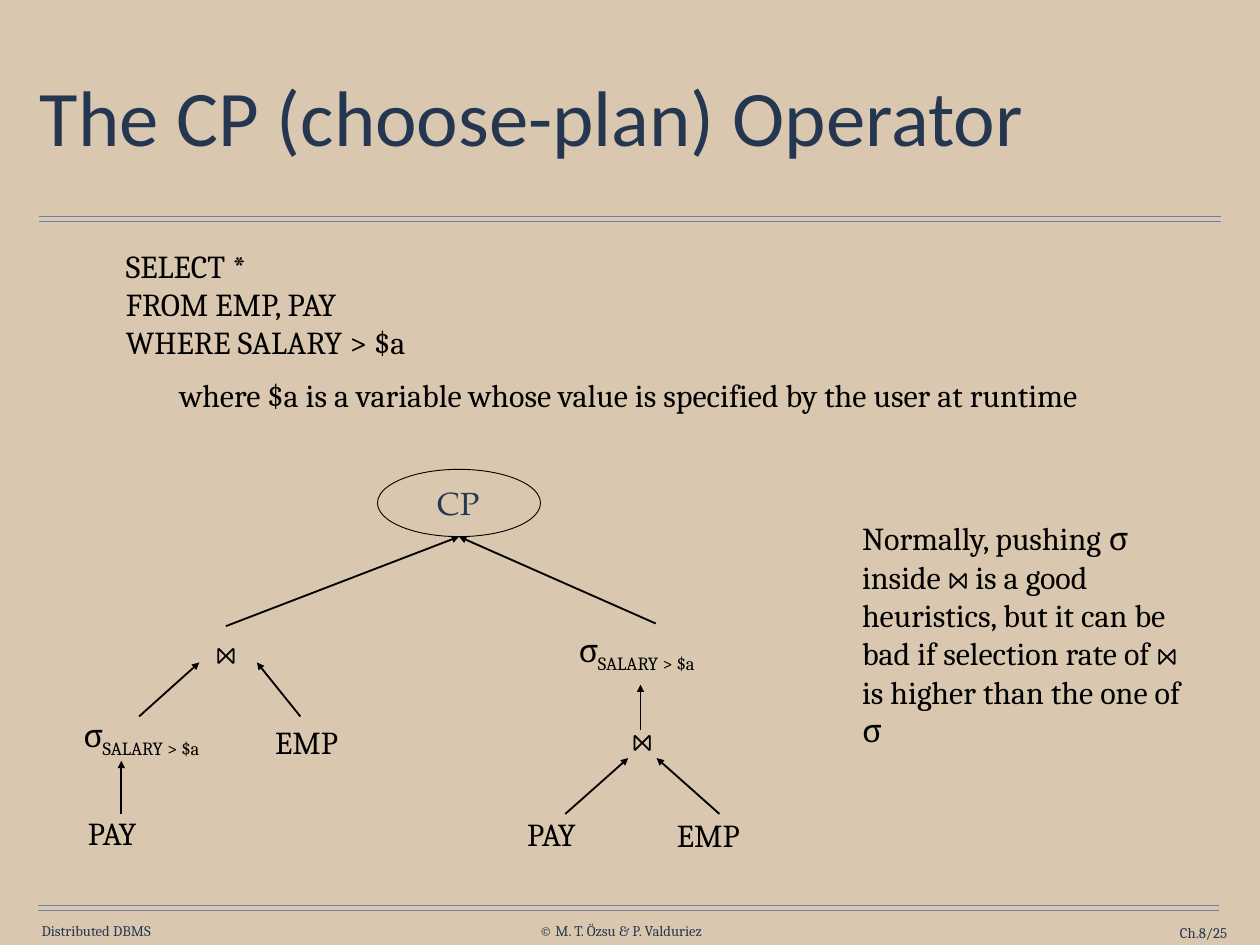
from dataclasses import dataclass

from lxml.etree import SubElement
from pptx import Presentation
from pptx.dml.color import RGBColor as Rgb
from pptx.enum.shapes import MSO_CONNECTOR as Connector, MSO_SHAPE as Preset
from pptx.enum.text import MSO_ANCHOR as Anchor, PP_ALIGN as Align
from pptx.oxml.ns import qn
from pptx.util import Inches, Pt

WIDTH, HEIGHT = Inches(14.22), Inches(10.67)
LABEL_INSETS = (0.14, 0.07)
RULE_GAP = 0.56


@dataclass(frozen=True)
class Theme:
    paper: Rgb = Rgb.from_string("D9C8AF")
    ink: Rgb = Rgb.from_string("000000")
    navy: Rgb = Rgb.from_string("263750")
    title_navy: Rgb = Rgb.from_string("253750")
    rule: Rgb = Rgb.from_string("6682AA")
    body_font: str = "Cambria"
    title_font: str = "Calibri"
    operator_font: str = "TeX Gyre Pagella"
    title_size: int = 64
    body_size: int = 26
    footer_size: int = 12


THEME = Theme()


# Positions are on a grid of 100 columns by 100 rows
def col(count):
    return round(WIDTH * count / 100)


def row(count):
    return round(HEIGHT * count / 100)


def write(frame, text, size=THEME.body_size, font=THEME.body_font, color=THEME.ink,
          align=Align.LEFT, spacing=None, before=0, indent=0):
    """Add a paragraph; a newline breaks the line, an underscore starts a subscript."""
    paragraph = frame.paragraphs[0]
    if paragraph.runs:
        paragraph = frame.add_paragraph()
    paragraph.alignment = align
    paragraph.space_before = Pt(before)
    if spacing:
        paragraph.line_spacing = spacing
    if indent:
        properties = paragraph._p.get_or_add_pPr()
        properties.set("marL", str(col(indent)))
        properties.set("indent", "0")
    for line_index, line in enumerate(text.split("\n")):
        if line_index:
            paragraph.add_line_break()
        for level, part in enumerate(line.split("_")):
            run = paragraph.add_run()
            run.text = part
            run.font.size, run.font.name = Pt(size), font
            run.font.color.rgb = color
            if level:
                run._r.get_or_add_rPr().set("baseline", "-25000")


def set_frame(frame, insets, anchor):
    frame.word_wrap = True
    frame.vertical_anchor = anchor
    frame.margin_left = frame.margin_right = Inches(insets[0])
    frame.margin_top = frame.margin_bottom = Inches(insets[1])


def add_text(slide, place, text, insets=(0, 0), anchor=Anchor.TOP, **text_format):
    left, top, width, height = place
    box = slide.shapes.add_textbox(col(left), row(top), col(width), row(height))
    set_frame(box.text_frame, insets, anchor)
    write(box.text_frame, text, **text_format)
    return box


def add_line(slide, start, end, color=THEME.ink, weight=1.5, arrow=True, source=None):
    line = slide.shapes.add_connector(
        Connector.STRAIGHT, col(start[0]), row(start[1]), col(end[0]), row(end[1]))
    line.line.color.rgb = color
    line.line.width = Pt(weight)
    if arrow:
        SubElement(line.line._get_or_add_ln(), qn("a:tailEnd"), type="triangle")
    SubElement(line._element.spPr, qn("a:effectLst"))
    if source is not None:
        line.begin_connect(source, 0)


def add_double_rule(slide, left, right, top):
    for y in (top, top + RULE_GAP):
        add_line(slide, (left, y), (right, y), THEME.rule, 1, arrow=False)


def add_operator(slide, place, text):
    left, top, width, height = place
    operator = slide.shapes.add_shape(
        Preset.OVAL, col(left), row(top), col(width), row(height))
    operator.shadow.inherit = False
    operator.fill.background()
    operator.line.color.rgb = THEME.ink
    operator.line.width = Pt(0.75)
    set_frame(operator.text_frame, (0.1, 0.05), Anchor.MIDDLE)
    write(operator.text_frame, text, font=THEME.operator_font,
          color=THEME.navy, align=Align.CENTER)


def add_footer(slide):
    for left, top, width, text, align in (
            (3.3, 97.56, 9.7, "Distributed DBMS", Align.LEFT),
            (42.83, 97.56, 14.63, "© M. T. Özsu & P. Valduriez", Align.LEFT),
            (86.57, 97.75, 10.83, "Ch.8/25", Align.RIGHT)):
        add_text(slide, (left, top, width, 1.87), text, anchor=Anchor.MIDDLE,
                 size=THEME.footer_size, color=THEME.navy, align=align)


def add_push_selection_plan(slide, plan_root):
    """Left branch: select before joining."""
    for place, text, align in (
            ((3.52, 75.07, 15.4, 5.44), "σ_SALARY > $a", Align.CENTER),
            ((5.98, 85.47, 7.24, 5.44), "PAY", Align.LEFT),
            ((20.39, 75.82, 7.88, 5.44), "EMP", Align.CENTER)):
        add_text(slide, place, text, LABEL_INSETS, align=align)
    join = add_text(slide, (14.56, 66.26, 6.75, 5.44), "⋈", LABEL_INSETS,
                    align=Align.CENTER)
    add_line(slide, (9.63, 86.13), (9.63, 80.51))
    add_line(slide, (11.04, 75.82), (15.82, 70.1))
    add_line(slide, (23.84, 75.82), (20.39, 70.1))
    add_line(slide, (17.93, 66.26), plan_root, source=join)


def add_join_first_plan(slide, plan_root):
    """Right branch: join before selecting."""
    for place, text, align, spacing in (
            ((41.84, 85.85, 5.27, 4.5), "PAY", Align.LEFT, 34.1),
            ((53.73, 85.94, 5.56, 4.5), "EMP", Align.LEFT, 34.1),
            ((46.55, 76.1, 8.86, 4.12), "⋈", Align.CENTER, 31.3)):
        add_text(slide, place, text, align=align, spacing=Pt(spacing))
    selection = add_text(slide, (45.92, 65.98, 12.24, 5.44), "σ_SALARY > $a",
                         spacing=Pt(41.2))
    add_line(slide, (44.87, 86.13), (49.86, 80.22))
    add_line(slide, (57.1, 86.13), (52.11, 80.22))
    add_line(slide, (50.84, 77.23), (50.84, 72.45))
    add_line(slide, (52.04, 65.98), plan_root, source=selection)


def main():
    deck = Presentation()
    deck.slide_width, deck.slide_height = WIDTH, HEIGHT
    slide = deck.slides.add_slide(deck.slide_layouts[6])
    slide.background.fill.solid()
    slide.background.fill.fore_color.rgb = THEME.paper

    # Page frame
    add_double_rule(slide, 3.09, 96.91, 22.87)
    add_double_rule(slide, 3.02, 96.77, 95.78)
    add_footer(slide)

    # Title and query
    add_text(slide, (2.74, 4.59, 94.51, 16.49), "The CP (choose-plan) Operator",
             (0.06, 0.06), Anchor.MIDDLE, size=THEME.title_size,
             font=THEME.title_font, color=THEME.title_navy, spacing=0.9)
    query = add_text(slide, (2.67, 25.49, 94.51, 20.06),
                     "SELECT *\nFROM EMP, PAY\nWHERE SALARY > $a",
                     (0.06, 0.06), indent=6.9)
    write(query.text_frame,
          "where $a is a variable whose value is specified by the user at runtime",
          align=Align.CENTER, before=12)

    # Operator tree
    plan_root = (36.43, 56.79)
    add_push_selection_plan(slide, plan_root)
    add_join_first_plan(slide, plan_root)
    add_operator(slide, (29.96, 49.67, 12.94, 7.12), "CP")

    # Remark
    add_text(slide, (67.72, 54.45, 28.27, 25.59),
             "Normally, pushing σ inside ⋈ is a good heuristics, but it can be bad "
             "if selection rate of ⋈ is higher than the one of σ", (0.1, 0.05))
    deck.save("out.pptx")


if __name__ == "__main__":
    main()
